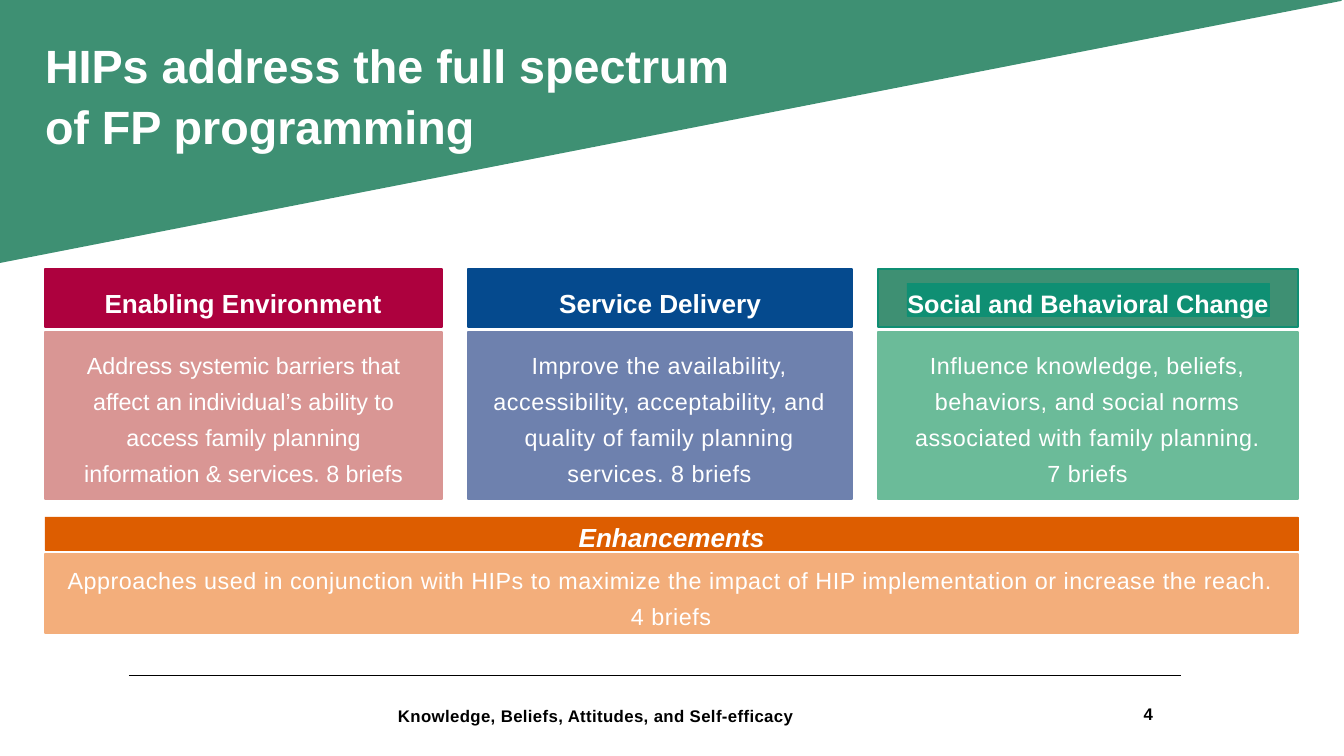
from pptx import Presentation
from pptx import util as u
from pptx.dml.color import RGBColor
from pptx.enum import shapes, text
from pptx.oxml.ns import qn
from lxml import etree

PX = 914400 / 67.2
WHITE, BLACK, GREEN = "FFFFFF", "000000", "3E9073"


def px(length):
    """Turn a length in px into EMU."""
    return u.Emu(round(length * PX))


def color(value):
    """Turn a hex string into a colour."""
    return RGBColor.from_string(value)


class Page:
    """Hold the style and the current slide."""

    font = "Arial"
    line_height = 38.5

    def __init__(self, deck):
        """Add a title-only slide to the deck."""
        self.slide = deck.slides.add_slide(deck.slide_layouts[5])
        self.shapes = self.slide.shapes

    def paint(self, shape, fill, line, width):
        """Fill and outline a shape without a shadow."""
        shape.shadow.inherit = False
        shape.fill.solid()
        shape.fill.fore_color.rgb = color(fill)
        shape.line.color.rgb = color(line)
        shape.line.width = u.Pt(width)

    def rect(self, left, top, width, height, fill, line=None, weight=2):
        """Add a filled rectangle."""
        box = self.shapes.add_shape(shapes.MSO_SHAPE.RECTANGLE, px(left), px(top), px(width), px(height))
        self.paint(box, fill, line or fill, weight)
        return box

    def polygon(self, points, fill):
        """Add a closed outline through the points."""
        builder = self.shapes.build_freeform(*points[0], scale=PX)
        builder.add_line_segments(points[1:], close=True)
        self.paint(builder.convert_to_shape(), fill, fill, 2)

    def rule(self, left, right, top, ink):
        """Add a thin horizontal line."""
        line = self.shapes.add_connector(shapes.MSO_CONNECTOR.STRAIGHT, px(left), px(top), px(right), px(top))
        line.line.color.rgb = color(ink)
        line.line.width = u.Pt(0.75)
        etree.SubElement(line._element.spPr, qn("a:effectLst"))

    def label(self, left, top, width, height, *lines, **style):
        """Add a text box."""
        box = self.shapes.add_textbox(px(left), px(top), px(width), px(height))
        self.set_text(box, lines, **style)

    def title(self, left, top, width, height, line, **style):
        """Place the title in front of the shapes drawn so far."""
        box = self.shapes.title
        box.left, box.top, box.width, box.height = map(px, (left, top, width, height))
        self.shapes._spTree.append(box._element)
        self.set_text(box, [line], **style)

    def set_text(self, box, lines, size=25, ink=WHITE, bold=False, italic=False, align="CENTER",
                 anchor="TOP", inset=(0, 0), spacing=line_height, tracking=0):
        """Set the paragraphs of a box in one style."""
        frame = box.text_frame
        frame.word_wrap = True
        frame.auto_size = text.MSO_AUTO_SIZE.NONE
        frame.vertical_anchor = text.MSO_ANCHOR[anchor]
        frame.margin_left = frame.margin_right = px(inset[0])
        frame.margin_top = frame.margin_bottom = px(inset[1])
        frame.text = "\n".join(lines)
        for para in frame.paragraphs:
            para.alignment = text.PP_ALIGN[align]
            if spacing:
                para.line_spacing = u.Pt(spacing)
            para.font.name = self.font
            para.font.size = u.Pt(size)
            para.font.bold = bold
            para.font.italic = italic
            para.font.color.rgb = color(ink)
            if tracking:
                for span in para.runs:
                    span._r.get_or_add_rPr().set("spc", str(tracking))


def main():
    """Build the slide and save it."""
    deck = Presentation()
    deck.slide_width, deck.slide_height = u.Inches(20), u.Inches(11.25)
    page = Page(deck)

    page.polygon([(0, 0), (0, 262), (1341, 0)], GREEN)
    page.title(45, 32, 711, 122, "HIPs address the full spectrum of FP programming",
               size=50, bold=True, align="LEFT", spacing=65)

    columns = [
        (45, 397, "AD013E", "AD013E", "D99694", "Enabling Environment", 28, 333, 0,
         ["Address systemic barriers that affect an individual’s ability to access "
          "family planning information & services. 8 briefs"]),
        (468, 384, "054A8E", "054A8E", "6E81AE", "Service Delivery", 28, 333, 60,
         ["Improve the availability, accessibility, acceptability, and quality of "
          "family planning services. 8 briefs"]),
        (878, 420, GREEN, "0F8F73", "6BBB99", "Social and Behavioral Change", 27, 417, 60,
         ["Influence knowledge, beliefs, behaviors, and social norms associated with "
          "family planning.", "7 briefs"]),
    ]
    for left, width, fill, accent, tint, heading, size, measure, tracking, lines in columns:
        page.rect(left, 332, width, 167, tint)
        page.rect(left, 269, width, 58, fill, accent)
        plate = page.rect(left + (width - 362) // 2, 283, 362, 33, accent, weight=0.75)
        page.set_text(plate, [heading], size=size, bold=True)
        page.label(left + (width - measure) // 2, 343, measure, 140, *lines, tracking=tracking)

    page.rect(45, 554, 1253, 79, "F3AE7B")
    banner = page.rect(45, 517, 1253, 33, "DD5D00", weight=0.75)
    page.set_text(banner, ["Enhancements"], size=28, bold=True, italic=True)
    page.label(60, 565, 1222, 58,
               "Approaches used in conjunction with HIPs to maximize the impact of HIP "
               "implementation or increase the reach. 4 briefs",
               anchor="MIDDLE", inset=(7, 3), tracking=60)

    page.rule(129, 1181, 675, BLACK)
    page.label(398, 702, 719, 22, "Knowledge, Beliefs, Attitudes, and Self-efficacy",
               size=18, ink=BLACK, bold=True, align="LEFT", spacing=25.2, tracking=40)
    page.label(1003, 700, 157, 27, "4", size=18, ink=BLACK, bold=True, align="RIGHT",
               anchor="MIDDLE", inset=(7, 3), spacing=None)
    deck.save("out.pptx")


if __name__ == "__main__":
    main()
